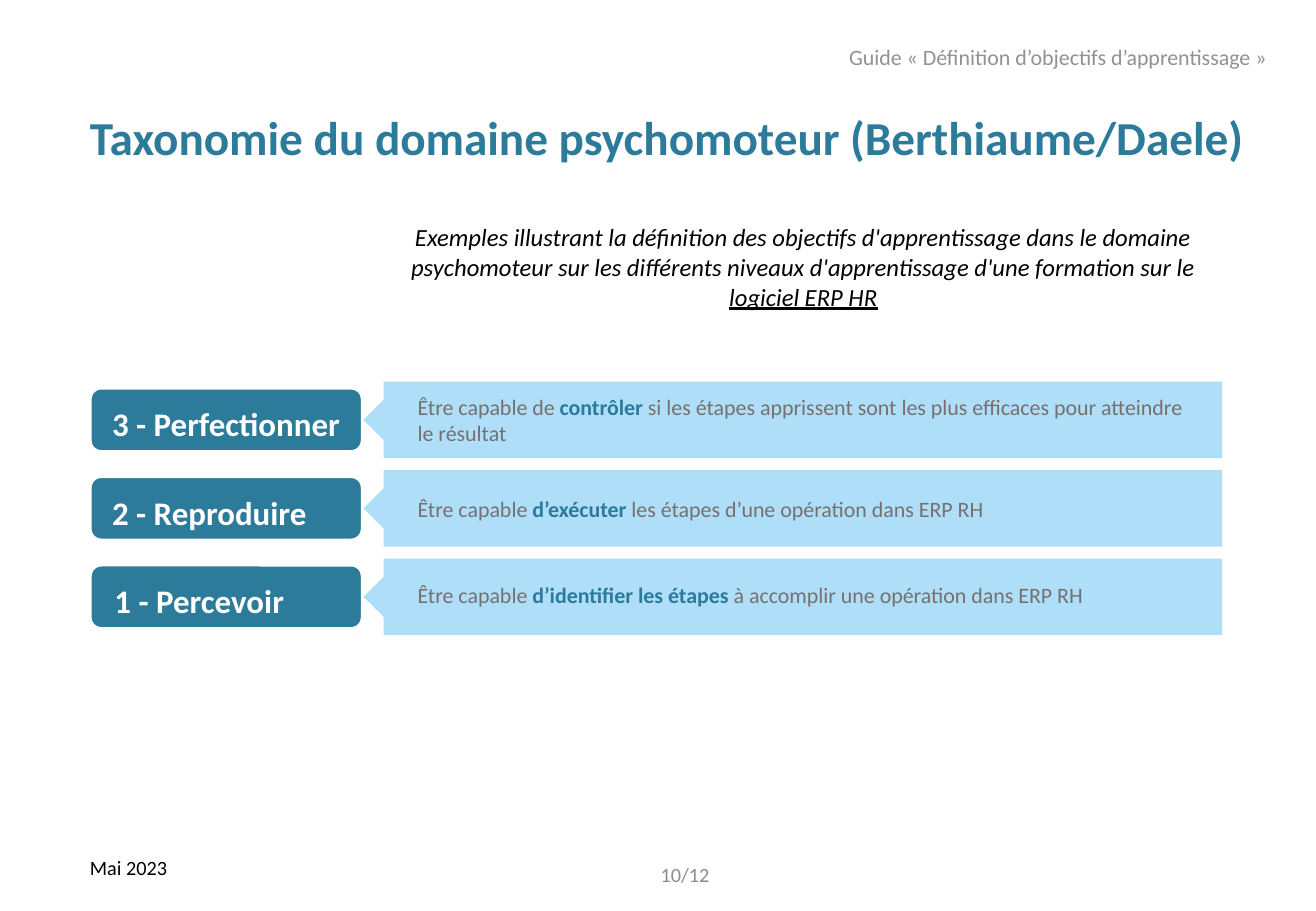
"""Build the slide on the taxonomy of the psychomotor domain."""
from dataclasses import dataclass, field
from typing import Any

from pptx import Presentation
from pptx.dml.color import RGBColor
from pptx.enum.shapes import MSO_SHAPE as Shp
from pptx.enum.text import MSO_ANCHOR as Anc, PP_ALIGN as Al
from pptx.util import Cm, Pt

TEAL = RGBColor(0x2D, 0x7B, 0x9A)
SKY = RGBColor(0xAF, 0xDE, 0xF9)
WHITE = RGBColor(0xFF, 0xFF, 0xFF)
BLACK = RGBColor(0x00, 0x00, 0x00)
BODY_GREY = RGBColor(0x76, 0x71, 0x71)
HEADER_GREY = RGBColor(0x92, 0x92, 0x93)
PAGE_GREY = RGBColor(0x8C, 0x8C, 0x8C)

ROW_TOP, ROW_PITCH, ROW_H = 7.98, 1.85, 1.6
LABEL_H = 1.3
Box = tuple[float, float, float, float]


@dataclass(frozen=True)
class Run:
    text: str
    size: float
    color: RGBColor
    fmt: dict[str, Any] = field(default_factory=dict)


@dataclass(frozen=True)
class Caption:
    box: Box
    runs: list[Run]
    align: Al = Al.LEFT
    anchor: Anc = Anc.MIDDLE
    spacing: float = 1.0


@dataclass(frozen=True)
class Level:
    label: str
    before: str
    verb: str
    after: str
    label_inset: float = 0.38
    spacing: float = 1.0


CAPTIONS = [
    Caption((8.03, 4.52, 17.53, 2.77), [
        Run("Exemples illustrant la définition des objectifs d'apprentissage dans le "
            "domaine psychomoteur sur les différents niveaux d'apprentissage d'une "
            "formation sur le ", 14.6, BLACK, {"italic": True}),
        Run("logiciel ERP HR", 14.6, BLACK, {"italic": True, "underline": True}),
    ], Al.CENTER, Anc.TOP),
    Caption((1.63, 2.08, 25.2, 1.7), [
        Run("Taxonomie du domaine psychomoteur (Berthiaume/Daele)", 28, TEAL,
            {"bold": True})], spacing=0.9),
    Caption((17.5, 0.38, 9.9, 1.7), [
        Run("Guide « Définition d’objectifs d’apprentissage »", 13, HEADER_GREY)],
        spacing=0.9),
    Caption((13.51, 17.78, 1.57, 1.02), [Run("10/12", 12, PAGE_GREY)], Al.RIGHT),
    Caption((1.63, 17.75, 3, 0.76), [Run("Mai 2023", 12, BLACK)], anchor=Anc.TOP),
]

LEVELS = [
    Level("3 - Perfectionner", "Être capable de ", "contrôler",
          " si les étapes apprissent sont les plus efficaces pour atteindre le résultat"),
    Level("2 - Reproduire", "Être capable ", "d’exécuter ",
          "les étapes d’une opération dans ERP RH"),
    Level("1 - Percevoir", "Être capable ", "d’identifier les étapes ",
          "à accomplir une opération dans ERP RH", 0.43, 0.9),
]


def write(sp: Any, runs: list[Run], align: Al = Al.LEFT, anchor: Anc = Anc.MIDDLE,
          spacing: float = 1.0, insets: Box = (0.25, 0.13, 0.25, 0.13)) -> None:
    """Fill a shape with one paragraph of formatted runs."""
    tf = sp.text_frame
    tf.word_wrap = True
    tf.vertical_anchor = anchor
    for side, inset in zip(("left", "top", "right", "bottom"), insets):
        setattr(tf, f"margin_{side}", Cm(inset))
    p = tf.paragraphs[0]
    p.alignment, p.line_spacing = align, spacing
    for run in runs:
        r = p.add_run()
        r.text = run.text
        fmt = {"name": "Calibri", "size": Pt(run.size), "bold": False} | run.fmt
        for name, value in fmt.items():
            setattr(r.font, name, value)
        r.font.color.rgb = run.color


def add_block(shapes: Any, kind: Shp, box: Box, fill: RGBColor,
              outlined: bool = True) -> Any:
    """Add a filled preset shape with an optional white outline."""
    sp = shapes.add_shape(kind, *map(Cm, box))
    sp.shadow.inherit = False
    sp.fill.solid()
    sp.fill.fore_color.rgb = fill
    if outlined:
        sp.line.color.rgb = WHITE
        sp.line.width = Pt(1)
    else:
        sp.line.fill.background()
    return sp


def add_level(s: Any, level: Level, top: float) -> None:
    """Add a level label with its arrow-shaped description."""
    grp = s.shapes.add_group_shape()
    arrow = add_block(grp.shapes, Shp.PENTAGON, (7.57, top, 17.98, ROW_H), SKY)
    arrow.rotation = 180
    panel = add_block(grp.shapes, Shp.RECTANGLE, (8.02, top, 17.53, ROW_H), SKY, False)
    write(panel, [Run(level.before, 13, BODY_GREY),
                  Run(level.verb, 13, TEAL, {"bold": True}),
                  Run(level.after, 13, BODY_GREY)],
          spacing=level.spacing, insets=(0.71, 0.28, 0.51, 0.28))
    label_top = top + (ROW_H - LABEL_H) / 2
    label = add_block(s.shapes, Shp.ROUNDED_RECTANGLE,
                      (1.9, label_top, 5.66, LABEL_H), TEAL)
    write(label, [Run(level.label, 19.5, WHITE, {"bold": True})],
          spacing=1.2, insets=(level.label_inset, 0.18, 0.38, 0.18))


def main() -> None:
    """Create the presentation and save it."""
    prs = Presentation()
    prs.slide_width, prs.slide_height = Cm(27.51), Cm(19.05)
    s = prs.slides.add_slide(prs.slide_layouts[6])
    for i, level in enumerate(LEVELS):
        add_level(s, level, ROW_TOP + i * ROW_PITCH)
    for cap in CAPTIONS:
        tb = s.shapes.add_textbox(*map(Cm, cap.box))
        write(tb, cap.runs, cap.align, cap.anchor, cap.spacing)
    prs.save("out.pptx")


if __name__ == "__main__":
    main()
